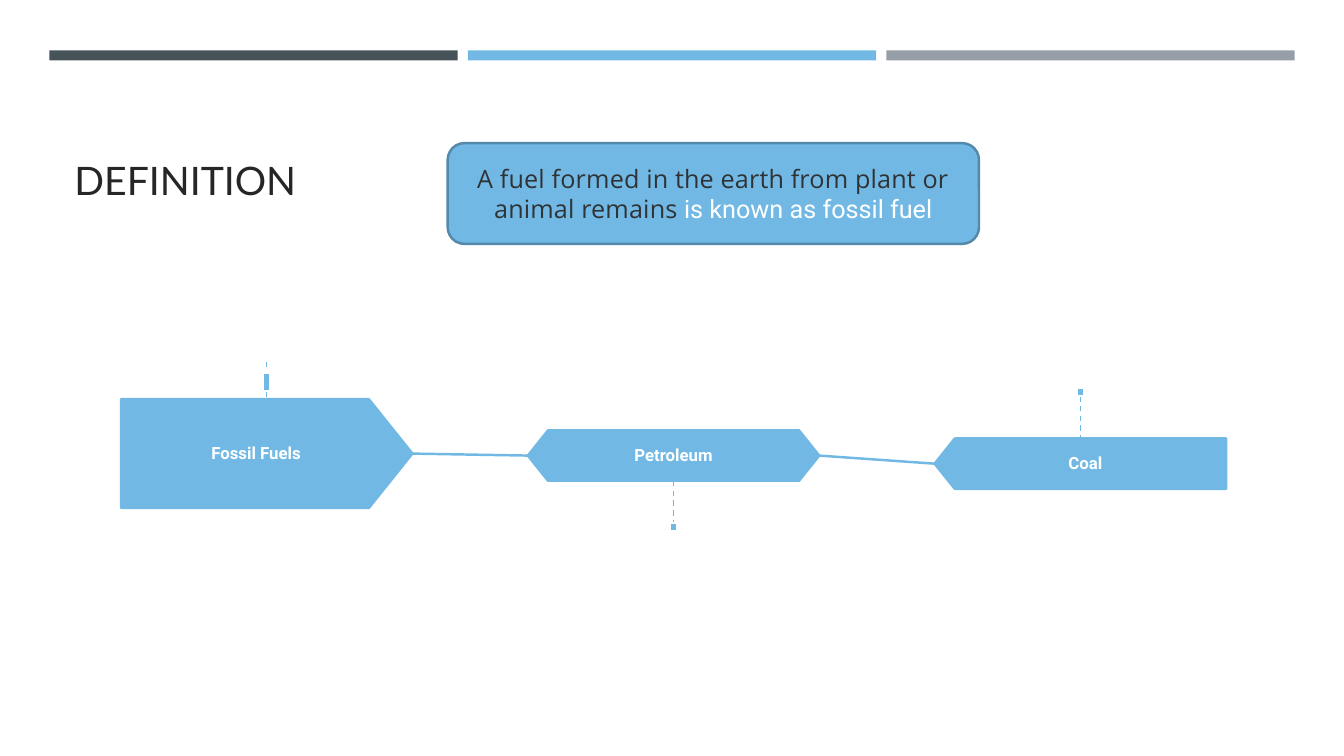
from lxml.etree import SubElement
from pptx import Presentation
from pptx.dml.color import RGBColor
from pptx.enum.dml import MSO_LINE
from pptx.enum.shapes import MSO_CONNECTOR, MSO_SHAPE
from pptx.enum.text import MSO_ANCHOR, PP_ALIGN
from pptx.oxml.ns import qn
from pptx.util import Inches, Pt

SLATE = RGBColor(0x46, 0x53, 0x59)
BLUE = RGBColor(0x71, 0xB9, 0xE4)
GREY = RGBColor(0x96, 0x9F, 0xA7)
EDGE = RGBColor(0x54, 0x89, 0xA9)
INK = RGBColor(0x26, 0x26, 0x26)
CHARCOAL = RGBColor(0x30, 0x33, 0x36)
WHITE = RGBColor(0xFF, 0xFF, 0xFF)


def add_box(slide, preset, box, fill, edge=None, adjust=None):
    shape = slide.shapes.add_shape(preset, *map(Inches, box))
    shape.shadow.inherit = False
    shape.fill.solid()
    shape.fill.fore_color.rgb = fill
    if edge is None:
        shape.line.fill.background()
    else:
        shape.line.color.rgb = edge
        shape.line.width = Pt(1.75)
    if adjust is not None:
        shape.adjustments[0] = adjust
    return shape


def add_line(slide, start, end, width=1.75, dash=None):
    line = slide.shapes.add_connector(
        MSO_CONNECTOR.STRAIGHT, *map(Inches, (*start, *end)))
    line.line.color.rgb = BLUE
    line.line.width = Pt(width)
    if dash is not None:
        line.line.dash_style = dash
    SubElement(line._element.spPr, qn("a:effectLst"))


def write(frame, *pieces, size, align=PP_ALIGN.CENTER, anchor=MSO_ANCHOR.MIDDLE,
          bold=False, line_spacing=None):
    """Fill one paragraph with pieces of (text, font, colour, letter spacing)."""
    frame.word_wrap = True
    frame.vertical_anchor = anchor
    paragraph = frame.paragraphs[0]
    paragraph.alignment = align
    if line_spacing is not None:
        paragraph.line_spacing = line_spacing
    for text, font, colour, spacing in pieces:
        run = paragraph.add_run()
        run.text = text
        run.font.name = font
        run.font.size = Pt(size)
        run.font.bold = bold
        run.font.color.rgb = colour
        if spacing:
            run._r.get_or_add_rPr().set("spc", str(round(spacing * 100)))


def add_top_bars(slide, box, gap=0.1):
    left, top, width, height = box
    bar_width = (width - 2 * gap) / 3
    for column, colour in enumerate((SLATE, BLUE, GREY)):
        add_box(slide, MSO_SHAPE.RECTANGLE,
                (left + column * (bar_width + gap), top, bar_width, height), colour)


def add_title(slide, box):
    title = slide.shapes.add_textbox(*map(Inches, box))
    write(title.text_frame, ("DEFINITION", "Lato", INK, 0), size=28,
          align=PP_ALIGN.LEFT, anchor=MSO_ANCHOR.BOTTOM)


def add_definition(slide, box):
    card = add_box(slide, MSO_SHAPE.ROUNDED_RECTANGLE, box, BLUE, EDGE)
    write(card.text_frame,
          ("A fuel formed in the earth from plant or animal remains",
           "Open Sans", CHARCOAL, 0.1),
          (" is known as fossil fuel", "Roboto", WHITE, 0), size=18)


def add_fuel(slide, name, preset, box, label_inset, flipped=False):
    """Place an arrow block whose label keeps clear of its points."""
    left, top, width, height = box
    block = add_box(slide, preset, box, BLUE, BLUE, adjust=0.4)
    if flipped:
        block.rotation = 180
    before, after = label_inset
    label = slide.shapes.add_textbox(
        *map(Inches, (left + before, top, width - before - after, height)))
    frame = label.text_frame
    frame.margin_left = frame.margin_right = Inches(0.1)
    frame.margin_top = frame.margin_bottom = Inches(0.1)
    write(frame, (name, "Roboto", WHITE, 0), size=12, bold=True, line_spacing=0.9)


def add_marker(slide, centre, stem, square_top, square_height=0.08):
    add_line(slide, (centre, stem[0]), (centre, stem[1]), 1, MSO_LINE.DASH)
    add_box(slide, MSO_SHAPE.RECTANGLE,
            (centre - 0.04, square_top, 0.08, square_height), BLUE, WHITE)


def add_fuel_chain(slide, box):
    left, top, width, height = box
    block_width, slim = 2.89, 0.5
    pitch = (width - block_width) / 2
    lefts = [left + column * pitch for column in range(3)]
    centres = [x + block_width / 2 for x in lefts]
    tops = (top, top + 0.31, top + 0.39)
    heights = (height, slim, slim)
    middles = [y + h / 2 for y, h in zip(tops, heights)]
    bottom = tops[1] + slim

    # Stem bounds, square top and square height of each marker
    markers = (((top - 0.37, top), top - 0.26, 0.18),
               ((bottom, bottom + 0.42), bottom + 0.42, 0.08),
               ((tops[2] - 0.42, tops[2]), tops[2] - 0.5, 0.08))
    for centre, marker in zip(centres, markers):
        add_marker(slide, centre, *marker)

    fuels = (("Fossil Fuels", MSO_SHAPE.PENTAGON, (0, 0.21), False),
             ("Petroleum", MSO_SHAPE.HEXAGON, (0.3, 0.3), False),
             ("Coal", MSO_SHAPE.PENTAGON, (0.1, 0), True))
    for (name, preset, inset, flipped), x, y, h in zip(fuels, lefts, tops, heights):
        add_fuel(slide, name, preset, (x, y, block_width, h), inset, flipped)
    for i in range(2):
        add_line(slide, (lefts[i] + block_width, middles[i]),
                 (lefts[i + 1], middles[i + 1]))


def main():
    deck = Presentation()
    deck.slide_width, deck.slide_height = Inches(13.33), Inches(7.5)
    slide = deck.slides.add_slide(deck.slide_layouts[6])
    add_top_bars(slide, (0.49, 0.5, 12.35, 0.1))
    add_title(slide, (0.64, 0.77, 3.7, 1.3))
    add_fuel_chain(slide, (1.2, 3.96, 10.96, 1.08))
    add_definition(slide, (4.44, 1.42, 5.27, 1))
    deck.save("out.pptx")


if __name__ == "__main__":
    main()
